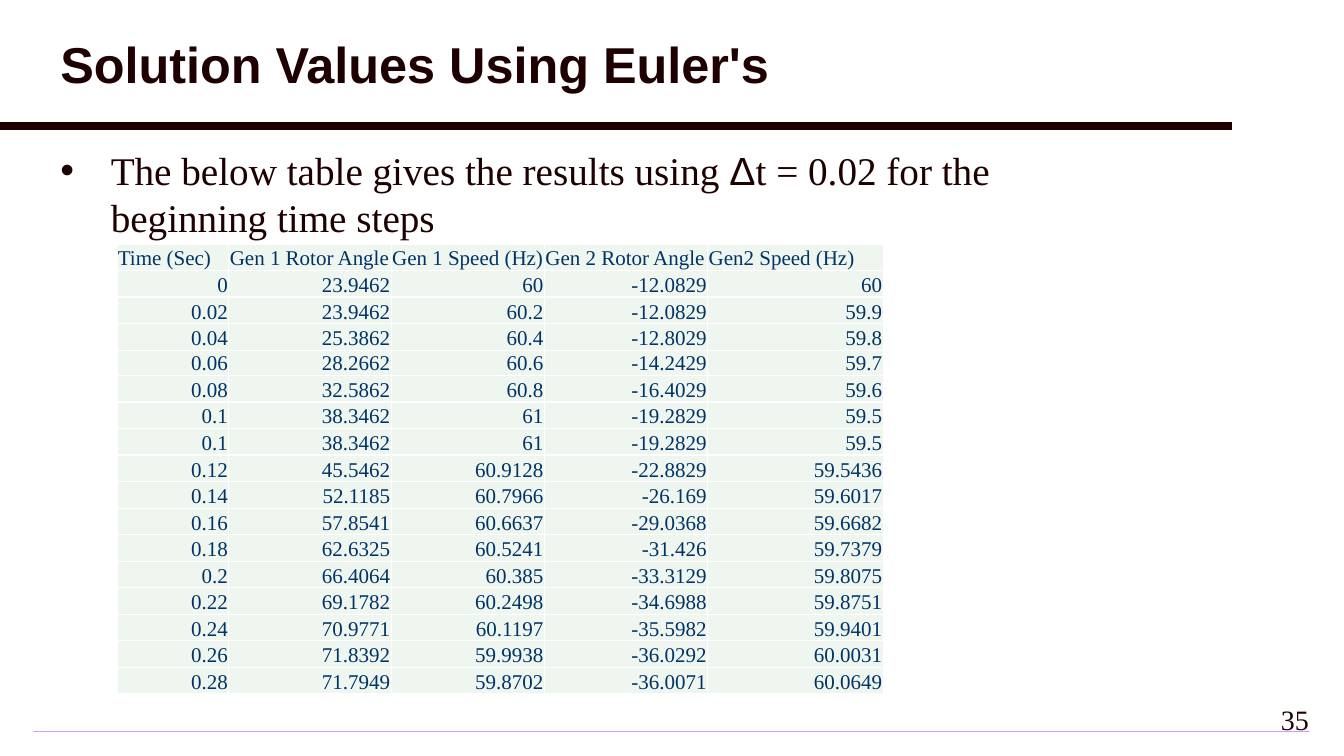
from dataclasses import dataclass

from lxml import etree
from pptx import Presentation
from pptx.dml.color import RGBColor
from pptx.enum.shapes import MSO_CONNECTOR, MSO_SHAPE
from pptx.enum.text import MSO_ANCHOR, PP_ALIGN
from pptx.oxml.ns import qn
from pptx.util import Inches, Pt

LEFT, RIGHT = PP_ALIGN.LEFT, PP_ALIGN.RIGHT
TOP, MIDDLE, BOTTOM = MSO_ANCHOR.TOP, MSO_ANCHOR.MIDDLE, MSO_ANCHOR.BOTTOM
RECTANGLE = MSO_SHAPE.RECTANGLE
STRAIGHT = MSO_CONNECTOR.STRAIGHT


@dataclass(frozen=True)
class Theme:
    """Colours, fonts and type sizes of the slide."""
    ink: str = "1E0000"
    table_text: str = "003366"
    table_fill: str = "EFF6EF"
    border: str = "FFFFFF"
    footer_inner: str = "CC99FF"
    footer_outer: str = "F3EBFF"
    heading_font: str = "Arial"
    body_font: str = "Times New Roman"
    title_size: int = 36
    body_size: int = 28
    number_size: int = 20
    table_size: int = 15


THEME = Theme()
HEADERS = ["Time (Sec)", "Gen 1 Rotor Angle", "Gen 1 Speed (Hz)",
           "Gen 2 Rotor Angle", "Gen2 Speed (Hz)"]
RESULTS = [
    ["0", "23.9462", "60", "-12.0829", "60"],
    ["0.02", "23.9462", "60.2", "-12.0829", "59.9"],
    ["0.04", "25.3862", "60.4", "-12.8029", "59.8"],
    ["0.06", "28.2662", "60.6", "-14.2429", "59.7"],
    ["0.08", "32.5862", "60.8", "-16.4029", "59.6"],
    ["0.1", "38.3462", "61", "-19.2829", "59.5"],
    ["0.1", "38.3462", "61", "-19.2829", "59.5"],
    ["0.12", "45.5462", "60.9128", "-22.8829", "59.5436"],
    ["0.14", "52.1185", "60.7966", "-26.169", "59.6017"],
    ["0.16", "57.8541", "60.6637", "-29.0368", "59.6682"],
    ["0.18", "62.6325", "60.5241", "-31.426", "59.7379"],
    ["0.2", "66.4064", "60.385", "-33.3129", "59.8075"],
    ["0.22", "69.1782", "60.2498", "-34.6988", "59.8751"],
    ["0.24", "70.9771", "60.1197", "-35.5982", "59.9401"],
    ["0.26", "71.8392", "59.9938", "-36.0292", "60.0031"],
    ["0.28", "71.7949", "59.8702", "-36.0071", "60.0649"],
]
COLUMN_WIDTHS = [1.11, 1.61, 1.52, 1.62, 1.74]
SHORT_ROW = 4
SHORT_ROW_HEIGHT = 0.24


def color(value):
    """Return the colour for a hexadecimal string."""
    return RGBColor.from_string(value)


def write(paragraph, text, *, size, font=THEME.body_font, ink=THEME.ink,
          bold=False, align=LEFT):
    """Add one formatted run to a paragraph."""
    paragraph.alignment = align
    run = paragraph.add_run()
    run.text = text
    run.font.size = Pt(size)
    run.font.name = font
    run.font.bold = bold
    run.font.color.rgb = color(ink)


def add_text_area(slide, box, anchor=TOP):
    """Add a wrapping text box and return its first paragraph."""
    frame = slide.shapes.add_textbox(*map(Inches, box)).text_frame
    frame.word_wrap = True
    frame.vertical_anchor = anchor
    return frame.paragraphs[0]


def add_bullet(paragraph, indent):
    """Give a paragraph a round bullet with a hanging indent."""
    properties = paragraph._p.get_or_add_pPr()
    properties.set("marL", str(Inches(indent)))
    properties.set("indent", str(-Inches(indent)))
    bullet_color = etree.SubElement(properties, qn("a:buClr"))
    etree.SubElement(bullet_color, qn("a:srgbClr"), val=THEME.ink)
    etree.SubElement(properties, qn("a:buFont"), typeface=THEME.heading_font)
    etree.SubElement(properties, qn("a:buChar"), char="•")


def add_header(slide, box):
    """Add the title and the thick rule along the bottom of its box."""
    left, top, width, height = box
    paragraph = add_text_area(slide, box, MIDDLE)
    paragraph.line_spacing = 0.9
    write(paragraph, "Solution Values Using Euler's", size=THEME.title_size,
          font=THEME.heading_font, bold=True)
    rule_y = Inches(top + height)
    rule = slide.shapes.add_connector(STRAIGHT, 0, rule_y, Inches(12.22), rule_y)
    rule.line.color.rgb = color(THEME.ink)
    rule.line.width = Pt(6)
    etree.SubElement(rule._element.spPr, qn("a:effectLst"))


def add_body(slide, box):
    """Add the bulleted sentence above the table."""
    paragraph = add_text_area(slide, box)
    add_bullet(paragraph, 0.5)
    write(paragraph, "The below table gives the results using ", size=THEME.body_size)
    write(paragraph, "Δ", size=THEME.body_size, font=THEME.heading_font)
    write(paragraph, "t = 0.02 for the beginning time steps", size=THEME.body_size)


def style_cell(cell):
    """Set the margins, borders and fill of a table cell."""
    cell.margin_left = cell.margin_right = Inches(0.01)
    cell.margin_top = cell.margin_bottom = 0
    cell.vertical_anchor = BOTTOM
    properties = cell._tc.get_or_add_tcPr()
    for side in ("a:lnL", "a:lnR", "a:lnT", "a:lnB"):
        line = etree.SubElement(properties, qn(side), w=str(Pt(1)))
        fill = etree.SubElement(line, qn("a:solidFill"))
        etree.SubElement(fill, qn("a:srgbClr"), val=THEME.border)
    cell.fill.solid()
    cell.fill.fore_color.rgb = color(THEME.table_fill)


def add_results_table(slide, box):
    """Add the table of time steps, sharing the height among its full rows."""
    rows = [HEADERS] + RESULTS
    table = slide.shapes.add_table(len(rows), len(HEADERS), *map(Inches, box)).table
    table.first_row = table.horz_banding = False
    for column, width in zip(table.columns, COLUMN_WIDTHS):
        column.width = Inches(width)
    full_height = (box[3] - SHORT_ROW_HEIGHT) / (len(rows) - 1)
    for row_index, values in enumerate(rows):
        height = SHORT_ROW_HEIGHT if row_index == SHORT_ROW else full_height
        table.rows[row_index].height = Inches(height)
        for column_index, value in enumerate(values):
            cell = table.cell(row_index, column_index)
            style_cell(cell)
            write(cell.text_frame.paragraphs[0], value, size=THEME.table_size,
                  ink=THEME.table_text, align=RIGHT if row_index else LEFT)


def add_footer_rule(slide, box):
    """Add the thin rule that shades outwards from its centre."""
    rule = slide.shapes.add_shape(RECTANGLE, *map(Inches, box))
    rule.shadow.inherit = False
    rule.line.fill.background()
    rule.fill.gradient()
    for stop, value in zip(rule.fill.gradient_stops,
                           (THEME.footer_inner, THEME.footer_outer)):
        stop.color.rgb = color(value)
    gradient = rule._element.spPr.find(qn("a:gradFill"))
    gradient.remove(gradient.find(qn("a:lin")))
    shading = etree.SubElement(gradient, qn("a:path"), path="shape")
    etree.SubElement(shading, qn("a:fillToRect"),
                     dict.fromkeys("ltrb", "50000"))


def add_page_number(slide, box):
    """Add the slide number at the lower right."""
    write(add_text_area(slide, box), "35", size=THEME.number_size, align=RIGHT)


def main():
    """Build the slide and save it."""
    presentation = Presentation()
    presentation.slide_width = Inches(13.33)
    presentation.slide_height = Inches(7.5)
    slide = presentation.slides.add_slide(presentation.slide_layouts[6])
    add_footer_rule(slide, (0.33, 7.25, 12.66, 0.01))
    add_header(slide, (0.5, 0.08, 12.67, 1.17))
    add_body(slide, (0.5, 1.4, 10.42, 1.18))
    add_results_table(slide, (1.16, 2.42, 7.6, 4.46))
    add_page_number(slide, (12.41, 6.92, 0.67, 0.5))
    presentation.save("out.pptx")


if __name__ == "__main__":
    main()
